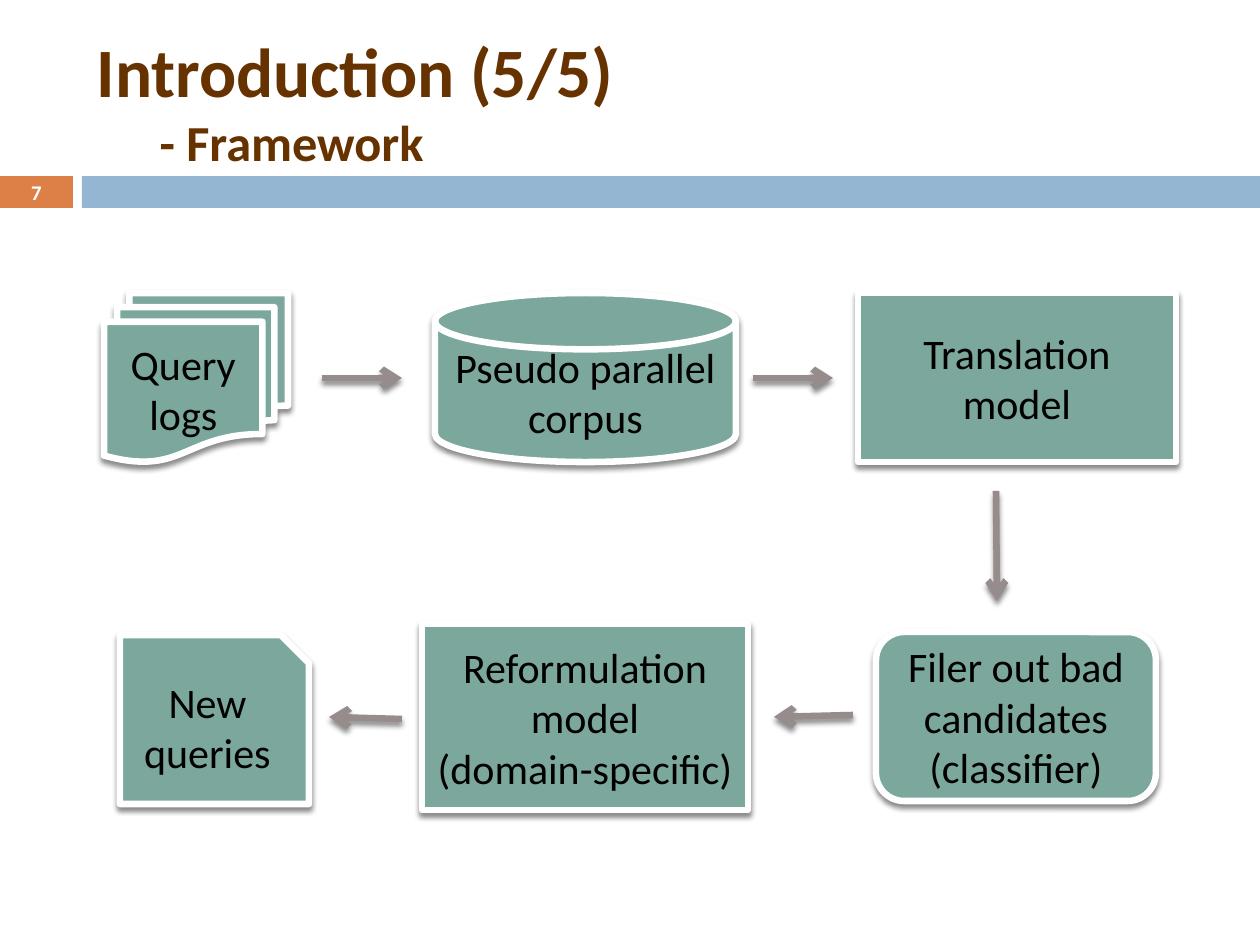
import lxml.etree
import pptx
import pptx.dml.color
import pptx.enum.shapes
import pptx.enum.text
import pptx.oxml
import pptx.oxml.ns
import pptx.util

RGB = pptx.dml.color.RGBColor
KIND = pptx.enum.shapes.MSO_SHAPE
ALIGN = pptx.enum.text.PP_ALIGN
MID = pptx.enum.text.MSO_ANCHOR.MIDDLE
FIT = pptx.enum.text.MSO_AUTO_SIZE.NONE
QN = pptx.oxml.ns.qn

WHITE = RGB(0xFF, 0xFF, 0xFF)
BLACK = RGB(0x00, 0x00, 0x00)
BROWN = RGB(0x66, 0x33, 0x00)
ORANGE = RGB(0xDD, 0x80, 0x47)
BLUE = RGB(0x94, 0xB6, 0xD2)
GREEN = RGB(0x7B, 0xA7, 0x9D)
GREY = RGB(0x96, 0x8C, 0x8C)

SHADE = (
    '<a:effectLst xmlns:a="http://schemas.openxmlformats.org/drawingml/2006/main">'
    '<a:outerShdw blurRad="38100" dist="30480" dir="5400000" algn="ctr" rotWithShape="0">'
    '<a:srgbClr val="000000"><a:alpha val="45000"/></a:srgbClr>'
    '</a:outerShdw></a:effectLst>'
)


def px(num):
    return round(num * 914400 / 126)


class Deck:
    """Hold the style and the current slide, and draw each kind of element."""

    def __init__(self):
        self.prs = pptx.Presentation()
        self.prs.slide_width, self.prs.slide_height = px(1260), px(945)
        self.slide = self.prs.slides.add_slide(self.prs.slide_layouts[5])
        self.shapes = self.slide.shapes
        self.face = "Calibri"
        self.width = pptx.util.Pt(3.75)

    def font(self, run, size, color, bold=False):
        style = {"name": self.face, "size": pptx.util.Pt(size), "bold": bold}
        for key, val in style.items():
            setattr(run.font, key, val)
        run.font.color.rgb = color

    def frame(self, shape):
        style = {"word_wrap": True, "auto_size": FIT, "vertical_anchor": MID}
        for key, val in style.items():
            setattr(shape.text_frame, key, val)
        return shape.text_frame

    def words(self, shape, text, size, color, bold=False):
        frame = self.frame(shape)
        frame.text = text
        for para in frame.paragraphs:
            para.alignment = ALIGN.CENTER
            for run in para.runs:
                self.font(run, size, color, bold)

    def shade(self, shape):
        props = shape._element.spPr
        for old in props.findall(QN("a:effectLst")):
            props.remove(old)
        props.append(pptx.oxml.parse_xml(SHADE))

    def title(self, box, head, sub):
        shape = self.shapes.title
        for key, val in zip(("left", "top", "width", "height"), box):
            setattr(shape, key, px(val))
        para = self.frame(shape).paragraphs[0]
        para.alignment = ALIGN.LEFT
        for text, size in ((head, 39.6), (sub, 28.8)):
            if para.runs:
                para.add_line_break()
                mark = para._p.find(QN("a:br"))
                lxml.etree.SubElement(mark, QN("a:rPr"), sz="3960")
            run = para.add_run()
            run.text = text
            self.font(run, size, BROWN, True)

    def bar(self, box, color):
        shape = self.shapes.add_shape(KIND.RECTANGLE, *map(px, box))
        shape.shadow.inherit = False
        shape.fill.solid()
        shape.fill.fore_color.rgb = color
        shape.line.fill.background()

    def label(self, box, text):
        shape = self.shapes.add_textbox(*map(px, box))
        for side in ("left", "right", "top", "bottom"):
            setattr(shape.text_frame, "margin_" + side, 0)
        self.words(shape, text, 11.9, WHITE, True)

    def node(self, kind, box, text):
        shape = self.shapes.add_shape(kind, *map(px, box))
        shape.fill.solid()
        shape.fill.fore_color.rgb = GREEN
        shape.line.color.rgb = WHITE
        shape.line.width = self.width
        self.shade(shape)
        self.words(shape, text, 24, BLACK)

    def arrow(self, *ends):
        kind = pptx.enum.shapes.MSO_CONNECTOR.STRAIGHT
        line = self.shapes.add_connector(kind, *map(px, ends))
        line.line.color.rgb = GREY
        line.line.width = self.width
        stroke = line._element.spPr.find(QN("a:ln"))
        lxml.etree.SubElement(stroke, QN("a:tailEnd"), type="arrow")
        self.shade(line)


def main():
    deck = Deck()
    deck.bar((0, 176, 73, 32), ORANGE)
    deck.bar((82, 176, 1178, 32), BLUE)
    deck.title((84, 32, 1124, 136), "Introduction (5/5)", "\t- Framework")
    deck.label((0, 175, 73, 34), "7")

    top, high = 293, 169
    nodes = (
        (KIND.FLOWCHART_MULTIDOCUMENT, (104, top, 184, high), "Query logs"),
        (KIND.FLOWCHART_MAGNETIC_DISK, (435, top, 301, high), "Pseudo parallel corpus"),
        (KIND.RECTANGLE, (858, top, 318, high), "Translation model"),
        (KIND.SNIP_1_RECTANGLE, (120, 635, 189, high), "New queries"),
        (KIND.FLOWCHART_ALTERNATE_PROCESS, (876, 632, 280, high),
         "Filer out bad candidates\n(classifier)"),
        (KIND.RECTANGLE, (422, 624, 326, 186), "Reformulation model\n(domain-specific)"),
    )
    for node in nodes:
        deck.node(*node)

    arrows = (
        (322, 378, 402, 378),
        (753, 378, 833, 378),
        (402, 719, 329, 717),
        (853, 715, 774, 717),
        (996, 491, 997, 601),
    )
    for ends in arrows:
        deck.arrow(*ends)
    deck.prs.save("out.pptx")


if __name__ == "__main__":
    main()
